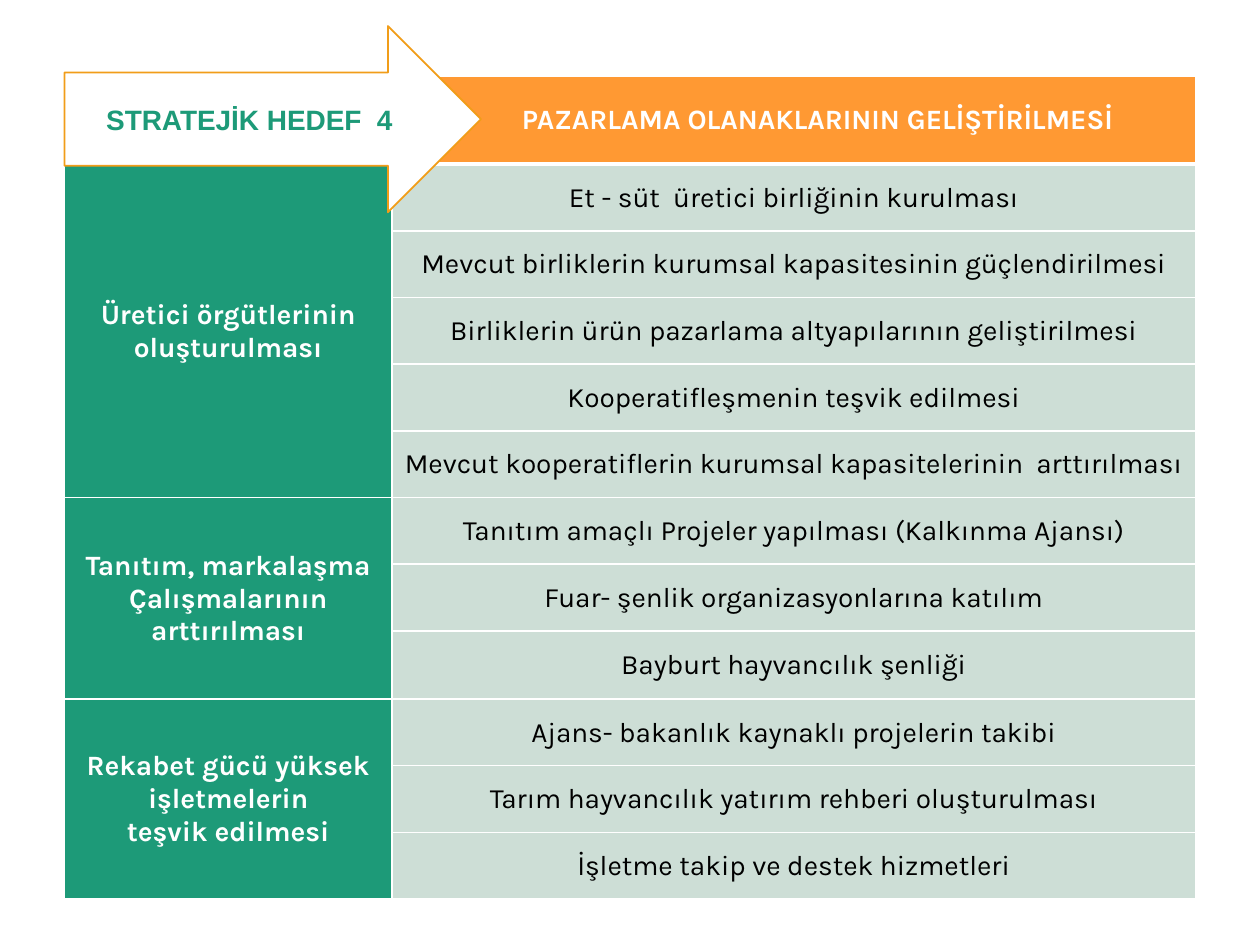
from pptx import Presentation
from pptx.dml.color import RGBColor
from pptx.enum.shapes import MSO_SHAPE as Shape
from pptx.enum.text import MSO_ANCHOR as Anchor, PP_ALIGN as Align
from pptx.oxml import parse_xml
from pptx.oxml.ns import nsdecls
from pptx.util import Pt


def color(value):
    return RGBColor.from_string(value)


def style_cell(cell, lines, fill, ink, bold, widths):
    for side, width in zip("LRTB", widths):
        cell._tc.get_or_add_tcPr().append(parse_xml(
            f'<a:ln{side} {nsdecls("a")} w="{Pt(width)}"><a:solidFill>'
            f'<a:srgbClr val="FFFFFF"/></a:solidFill></a:ln{side}>'))
    cell.fill.solid()
    cell.fill.fore_color.rgb = color(fill)
    cell.vertical_anchor = Anchor.MIDDLE
    cell.margin_left = cell.margin_right = cell.margin_top = Pt(0.7)
    cell.margin_bottom = Pt(0)
    cell.text = lines
    for line in cell.text_frame.paragraphs:
        line.alignment = Align.CENTER
        line.font.name = "Karla"
        line.font.size = Pt(16)
        line.font.bold = bold
        line.font.color.rgb = color(ink)


GREEN, PALE, ORANGE, WHITE = "1D9A78", "CDDED6", "FF9933", "FFFFFF"
goals = [
    ("Üretici örgütlerinin oluşturulması", [
        "Et - süt  üretici birliğinin kurulması",
        "Mevcut birliklerin kurumsal kapasitesinin güçlendirilmesi",
        "Birliklerin ürün pazarlama altyapılarının geliştirilmesi",
        "Kooperatifleşmenin teşvik edilmesi",
        "Mevcut kooperatiflerin kurumsal kapasitelerinin  arttırılması"]),
    ("Tanıtım, markalaşma\nÇalışmalarının arttırılması", [
        "Tanıtım amaçlı Projeler yapılması (Kalkınma Ajansı)",
        "Fuar- şenlik organizasyonlarına katılım",
        "Bayburt hayvancılık şenliği"]),
    ("Rekabet gücü yüksek işletmelerin\nteşvik edilmesi", [
        "Ajans- bakanlık kaynaklı projelerin takibi",
        "Tarım hayvancılık yatırım rehberi oluşturulması",
        "İşletme takip ve destek hizmetleri"]),
]

prs = Presentation()
prs.slide_width, prs.slide_height = Pt(720), Pt(540)
slide = prs.slides.add_slide(prs.slide_layouts[6])

plan = slide.shapes.add_table(12, 2, Pt(36.9), Pt(43.4), Pt(646.4), Pt(470.7)).table
plan.columns[0].width, plan.columns[1].width = Pt(187), Pt(459.4)
for row in plan.rows:
    row.height = Pt(38.1)
plan.rows[0].height = Pt(50.4)
plan.rows[8].height = Pt(38.9)

header_borders = (1, 1, 1, 3)
style_cell(plan.cell(0, 0), "", GREEN, WHITE, True, header_borders)
heading = plan.cell(0, 1)
style_cell(heading, "PAZARLAMA OLANAKLARININ GELİŞTİRİLMESİ", ORANGE, WHITE, True, header_borders)
heading.margin_left = Pt(28)

first = 1
for goal, actions in goals:
    last = first + len(actions) - 1
    plan.cell(first, 0).merge(plan.cell(last, 0))
    for index, action in enumerate(actions, first):
        borders = (1, 1, 3 if index == 1 else 1, 1)
        style_cell(plan.cell(index, 0), goal if index == first else "", GREEN, WHITE, True, borders)
        style_cell(plan.cell(index, 1), action, PALE, "000000", False, borders)
    first = last + 1

target = slide.shapes.add_shape(Shape.RIGHT_ARROW, Pt(36.9), Pt(14.9), Pt(238), Pt(106.4))
target.shadow.inherit = False
target.fill.solid()
target.fill.fore_color.rgb = color(WHITE)
target.line.color.rgb = color("F19D19")
target.line.width = Pt(1)
target.text_frame.vertical_anchor = Anchor.MIDDLE
target.text_frame.text = "STRATEJİK HEDEF  4"
title = target.text_frame.paragraphs[0]
title.alignment = Align.CENTER
title.font.name = "Arial"
title.font.size = Pt(16)
title.font.bold = True
title.font.color.rgb = color(GREEN)

prs.save("out.pptx")
